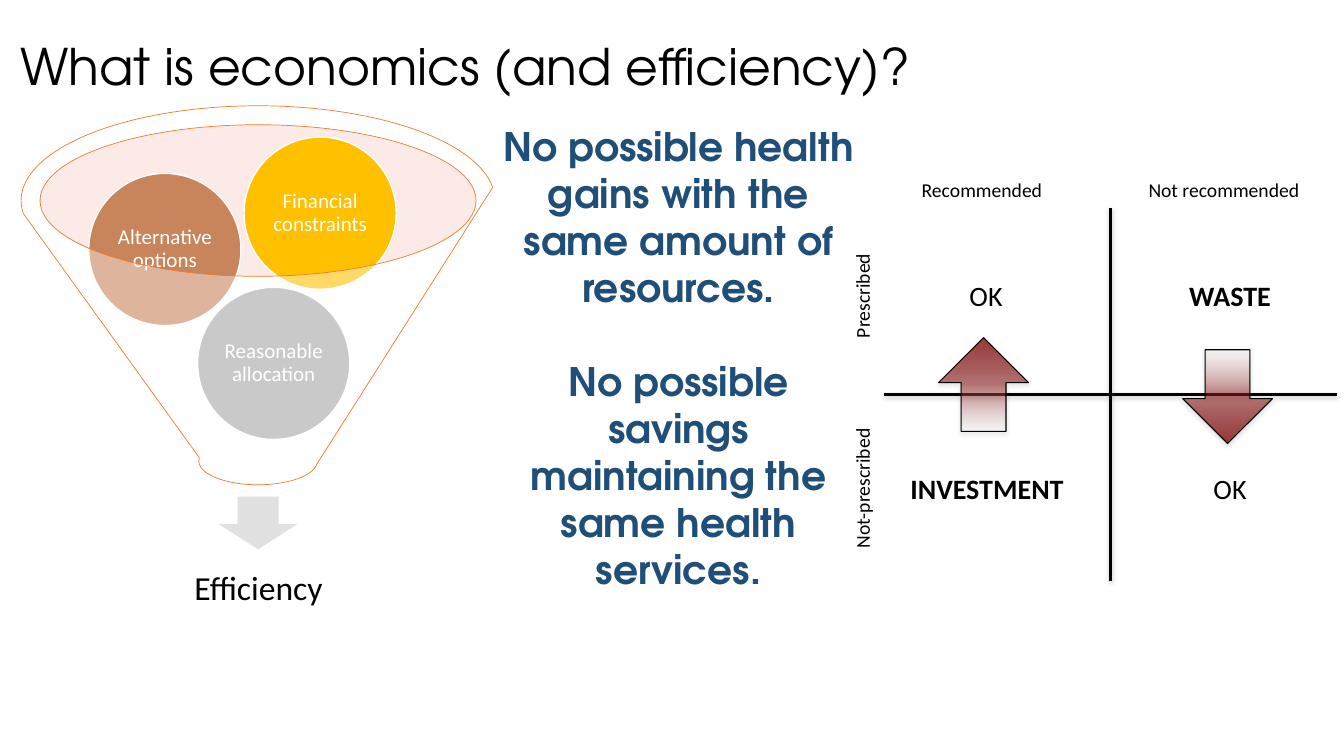
from dataclasses import dataclass

from lxml import etree
from pptx import Presentation
from pptx import util as u
from pptx.dml import color
from pptx.enum import shapes, text
from pptx.oxml import ns

IN, PT = u.Inches, u.Pt
KIND = shapes.MSO_SHAPE


@dataclass(frozen=True)
class Theme:
    head: str = "TeX Gyre Adventor"
    body: str = "Calibri"
    black: str = "000000"
    white: str = "FFFFFF"
    blue: str = "1F4E79"
    rim: str = "ED7D31"
    mouth: str = "F6CCBE"
    brown: str = "C8845A"
    gold: str = "FFC000"
    gray: str = "A5A5A5"
    pale: str = "E1E1E1"
    red: str = "800000"
    shade: str = "808080"
    title: int = 36
    claim: int = 28
    result: int = 24
    cell: int = 20
    ball: int = 15
    axis: int = 14


T = Theme()


def rgb(code):
    return color.RGBColor.from_string(code)


def node(parent, tag, **attrs):
    item = etree.SubElement(parent, ns.qn("a:" + tag))
    for key, val in attrs.items():
        item.set(key, str(val))
    return item


def tint(parent, code, alpha):
    """Add a colour with an opacity in percent."""
    node(node(parent, "srgbClr", val=code), "alpha", val=alpha * 1000)


def glow(item, alpha, dist):
    """Cast a soft shadow straight down."""
    props = item._element.spPr
    for old in props.findall(ns.qn("a:effectLst")):
        props.remove(old)
    cast = node(node(props, "effectLst"), "outerShdw", blurRad=PT(3.1),
                dist=PT(dist), dir=5400000, rotWithShape=0)
    tint(cast, T.shade, alpha)


def form(slide, kind, box, fill=None, line=None, width=1, alpha=100):
    item = slide.shapes.add_shape(kind, *map(IN, box))
    item.shadow.inherit = False
    if fill:
        item.fill.solid()
        item.fill.fore_color.rgb = rgb(fill)
        if alpha < 100:
            clr = item._element.spPr.find(".//" + ns.qn("a:srgbClr"))
            node(clr, "alpha", val=alpha * 1000)
    if line:
        item.line.color.rgb = rgb(line)
        item.line.width = PT(width)
    else:
        item.line.fill.background()
    return item


def write(item, lines, size, ink=T.black, face=T.body, bold=False,
          mid=True, inset=None, tight=None, gap=0):
    """Set one paragraph per line, with a gap in points between them."""
    frame = item.text_frame
    frame.word_wrap = True
    frame.vertical_anchor = text.MSO_ANCHOR.MIDDLE if mid else text.MSO_ANCHOR.TOP
    if inset is not None:
        frame.margin_left = frame.margin_right = IN(inset)
        frame.margin_top = frame.margin_bottom = IN(inset)
    for i, line in enumerate(lines):
        para = frame.add_paragraph() if i else frame.paragraphs[0]
        para.alignment = text.PP_ALIGN.CENTER
        if i:
            para.space_before = PT(gap)
        if tight:
            para.line_spacing = tight
        run = para.add_run()
        run.text = line
        run.font.name, run.font.size = face, PT(size)
        run.font.bold, run.font.color.rgb = bold, rgb(ink)
    return item


def label(slide, box, lines, size, **style):
    return write(slide.shapes.add_textbox(*map(IN, box)), lines, size, **style)


def title(slide, box):
    item = label(slide, box, ["What is economics (and efficiency)?"], T.title,
                 face=T.head, mid=False)
    item.text_frame.paragraphs[0].alignment = text.PP_ALIGN.LEFT


def claims(slide, box):
    label(slide, box, [
        "No possible health gains with the same amount of resources.",
        "No possible savings maintaining the same health services.",
    ], T.claim, ink=T.blue, face=T.head, bold=True, mid=False, gap=33.6)


def funnel(slide, box):
    x, y, w, h = box
    form(slide, KIND.OVAL, (x + 0.18, y + 0.19, 4.33, 1.5), T.mouth, alpha=40)
    form(slide, KIND.DOWN_ARROW, (x + w / 2 - 0.42, y + 3.87, 0.84, 0.54),
         T.pale, T.white)
    label(slide, (x + 0.34, y + 4.29, 4.03, 1.01), ["Efficiency"], T.result,
          inset=0.19, tight=0.9)
    for dx, dy, fill, name in (
            (1.75, 1.8, T.gray, "Reasonable allocation"),
            (0.67, 0.67, T.brown, "Alternative options"),
            (2.21, 0.31, T.gold, "Financial constraints")):
        ball = form(slide, KIND.OVAL, (x + dx, y + dy, 1.51, 1.51), fill, T.white)
        write(ball, [name], T.ball, ink=T.white, inset=0.02, tight=0.9)
    form(slide, KIND.FUNNEL, (x, y, w, h), T.white, T.rim, 0.5, alpha=40)


def rule(slide, *ends):
    line = slide.shapes.add_connector(shapes.MSO_CONNECTOR.STRAIGHT, *map(IN, ends))
    line.line.color.rgb = rgb(T.black)
    line.line.width = PT(2.25)
    glow(line, 38, 1.6)


def arrow(slide, box, turn):
    item = form(slide, KIND.DOWN_ARROW, box, line=T.black, width=0.75)
    item.rotation = turn
    props = item._element.spPr
    grad = etree.Element(ns.qn("a:gradFill"), rotWithShape="1")
    stops = node(grad, "gsLst")
    for pos, ink, alpha in ((0, T.white, 25), (50, T.red, 50), (100, T.red, 75)):
        tint(node(stops, "gs", pos=pos * 1000), ink, alpha)
    node(grad, "lin", ang=5400000, scaled=0)
    props.find(ns.qn("a:ln")).addprevious(grad)
    glow(item, 35, 1.8)


def matrix(slide, box):
    """Cross the two axes, then name the rows, columns and cells."""
    x, y, w, h = box
    left, right = x + 0.98, x + 3.43
    for mid, name in ((left - 0.01, "Recommended"), (right - 0.06, "Not recommended")):
        label(slide, (mid - 0.93, y - 0.42, 1.86, 0.48), [name], T.axis)
    rule(slide, x, y + h / 2, x + w, y + h / 2)
    rule(slide, x + w / 2, y + h, x + w / 2, y)
    for dy, name in ((2.5, "Not-prescribed"), (0.59, "Prescribed")):
        side = label(slide, (x - 0.95, y + dy, 1.46, 0.57), [name], T.axis)
        side.rotation = 270
    for mid, dy, name, bold in (
            (x + 1.01, 0.63, "OK", False), (right, 2.54, "OK", False),
            (right, 0.63, "WASTE", True), (x + 1.02, 2.54, "INVESTMENT", True)):
        label(slide, (mid - 1.05, y + dy, 2.1, 0.48), [name], T.cell, bold=bold)
    arrow(slide, (right - 0.47, y + 1.41, 0.89, 0.93), 0)
    arrow(slide, (left - 0.44, y + 1.29, 0.89, 0.93), 180)


def main():
    deck = Presentation()
    deck.slide_width, deck.slide_height = IN(13.33), IN(7.5)
    slide = deck.slides.add_slide(deck.slide_layouts[6])
    funnel(slide, (0.21, 1.05, 4.7, 3.76))
    title(slide, (0.1, 0.3, 13.11, 0.71))
    claims(slide, (4.86, 1.16, 3.74, 4.81))
    matrix(slide, (8.77, 2.06, 4.49, 3.7))
    deck.save("out.pptx")


if __name__ == "__main__":
    main()
